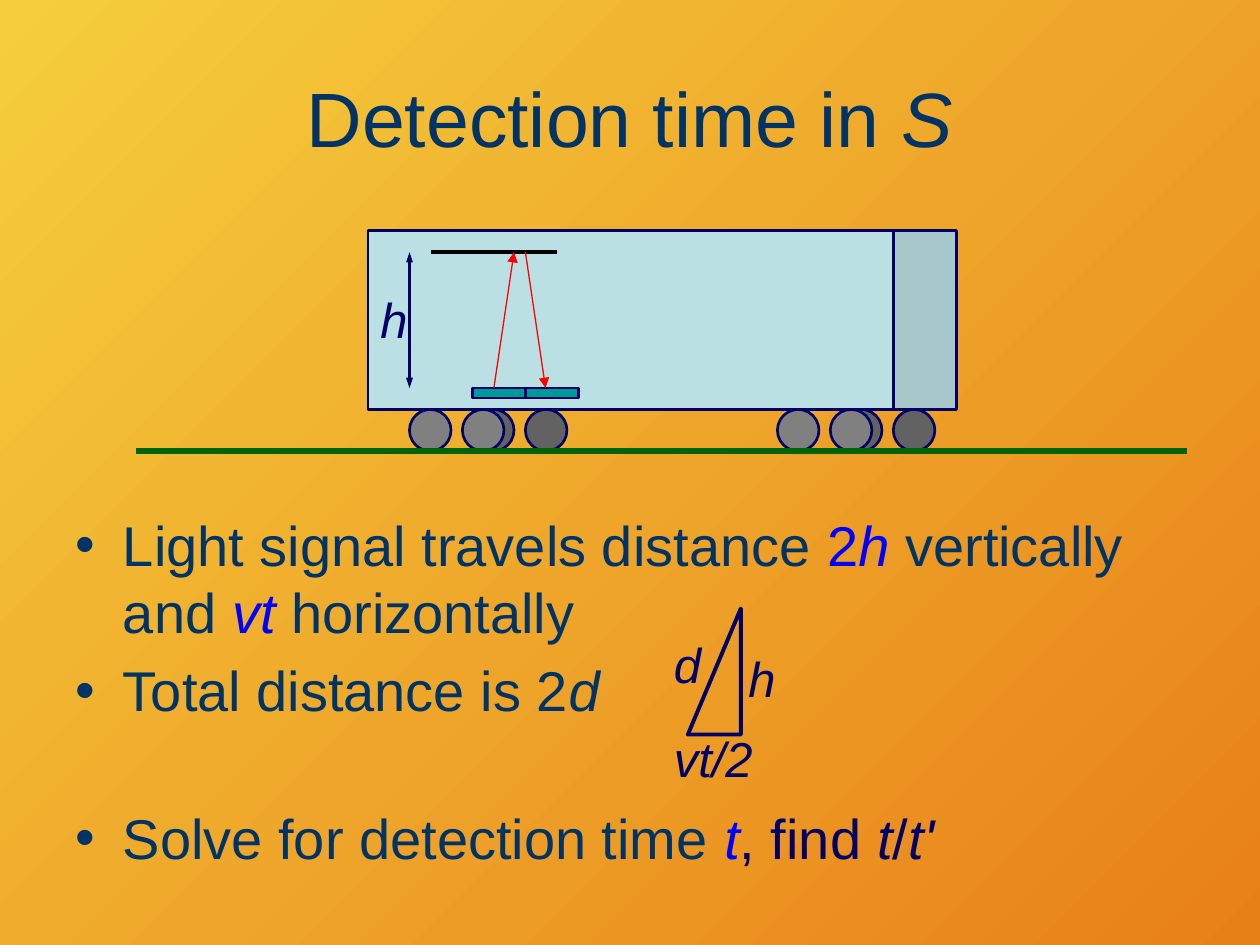
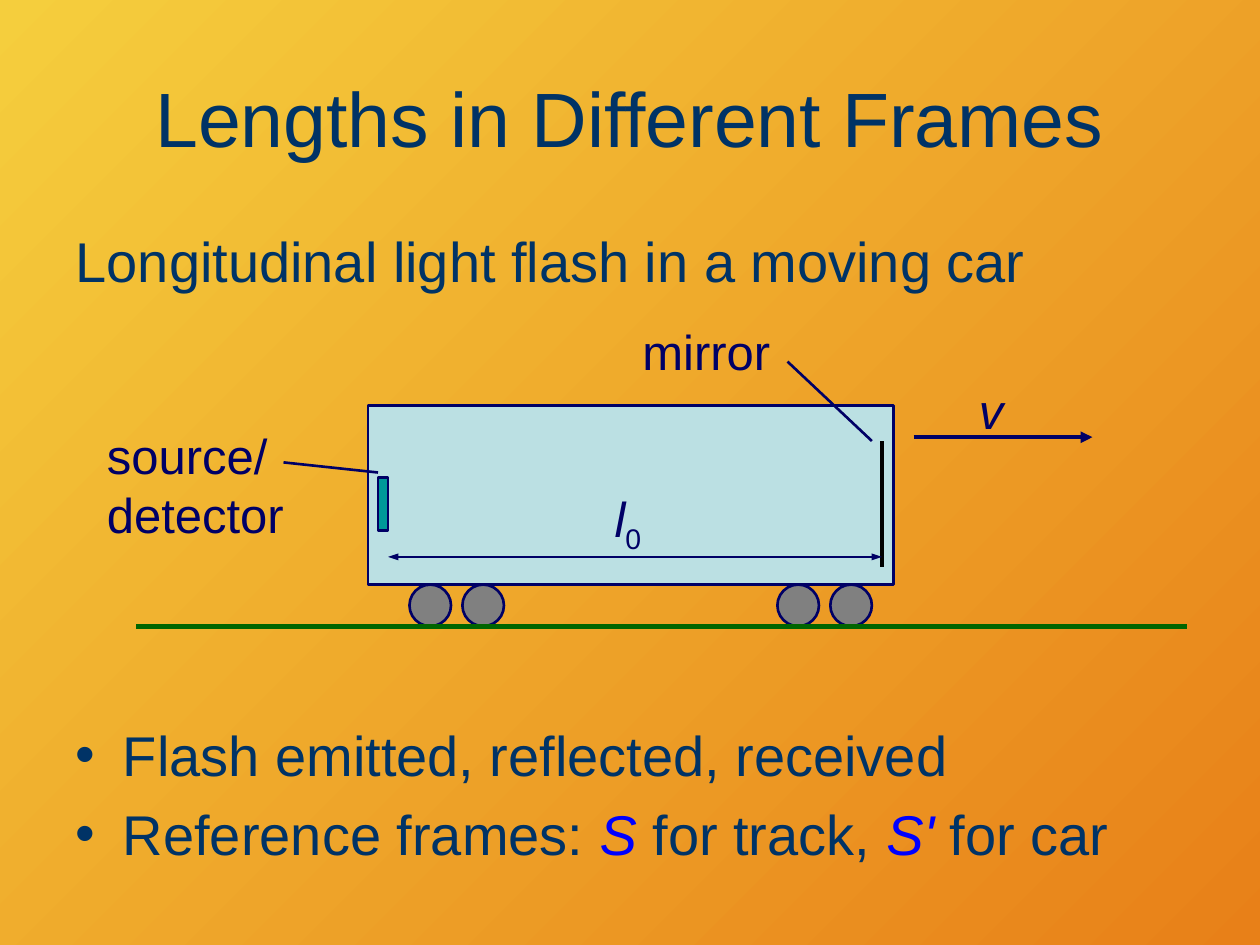
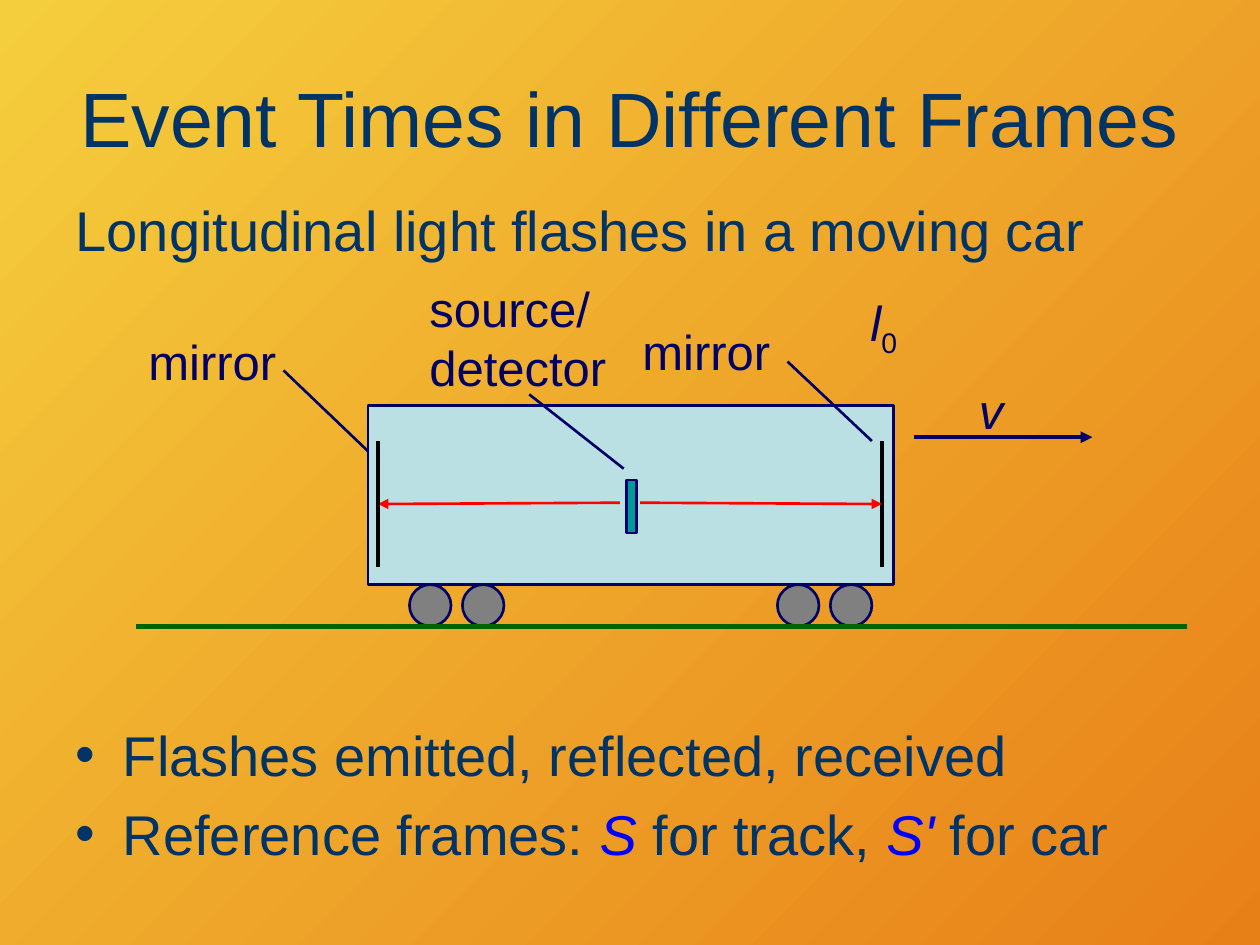
from lxml import etree
from pptx import Presentation
from pptx.dml.color import RGBColor
from pptx.enum.shapes import MSO_CONNECTOR, MSO_SHAPE as SHAPE
from pptx.enum.text import MSO_ANCHOR, MSO_AUTO_SIZE as AUTO_SIZE, PP_ALIGN
from pptx.oxml.ns import qn
from pptx.util import Inches, Pt

COLORS = {
    "yellow": "F5CE3D", "orange": "E88018", "text": "003366", "blue": "0000FF",
    "navy": "000066", "car": "BBE0E3", "rear car": "A7C8CB", "wheel": "808080",
    "rear wheel": "626262", "teal": "009999", "black": "000000",
    "track": "006500", "red": "FF0000",
}
FONT = "Arial"
CAR_LEFT, CAR_WIDTH, CAR_HEIGHT = 2.92, 4.17, 1.42
WHEEL_OFFSETS, WHEEL_SIZE = (0.33, 0.75, 3.25, 3.67), 0.33
DETECTOR_WIDTH, DETECTOR_HEIGHT = 0.42, 0.08

# Text is a list of paragraphs; a paragraph is a list of (text, style) runs
MIRROR = [("mirror", "")]
SOURCE_DETECTOR = [("source/", ""), ("\n", ""), ("detector", "")]
REST_LENGTH = [("l", "italic"), ("0", "sub")]
FRAMES = [("Reference frames: ", ""), ("S", "blue italic"), (" for track, ", ""),
          ("S'", "blue italic"), (" for car", "")]

# Lines: x1, y1, x2, y2, colour, width, arrowheads
LOW_CAR_LINES = [
    (7.25, 3.47, 8.67, 3.47, "navy", 2.25, "end"),
    (7, 3.5, 7, 4.5, "black", 2.25, ""),
    (6.25, 2.87, 6.92, 3.5, "navy", 1.5, ""),
]
# Labels: left, top, width, height, runs
LOW_CAR_LABELS = [
    (7.67, 2.97, 0.4, 0.57, [("v", "italic")]),
    (5, 2.5, 1.22, 0.57, MIRROR),
]
LIST_BOX = (0.5, 5.67, 9, 1.25)

SLIDES = [
    {
        "title": [("Detection time in ", ""), ("S", "italic")],
        "texts": [
            ((0.5, 4, 9, 1.83), True, [
                [("Light signal travels distance ", ""), ("2", "blue"),
                 ("h ", "blue italic"), ("vertically and ", ""),
                 ("vt", "blue italic"), (" horizontally", "")],
                [("Total distance is 2", ""), ("d", "italic")]]),
            ((0.5, 6.33, 8.42, 0.67), True, [
                [("Solve for detection time ", ""), ("t", "blue italic"),
                 (", find ", "navy"), ("t", "navy italic"), ("/", "navy"),
                 ("t'", "navy italic")]]),
        ],
        "car top": 1.83,
        "rear car": True,
        "detectors": [(3.75, 3.08, 0), (4.17, 3.08, 0)],
        "triangle": (5.46, 4.83, 0.42, 1),
        "lines": [
            (3.42, 2, 4.42, 2, "black", 2.25, ""),
            (3.25, 2, 3.25, 3.08, "navy", 1.5, "both"),
            (3.92, 3.08, 4.08, 2, "red", 0.75, "end"),
            (4.17, 2, 4.33, 3.08, "red", 0.75, "end"),
        ],
        "labels": [
            (2.92, 2.25, 0.42, 0.57, [("h", "italic")]),
            (5.84, 5.1, 0.42, 0.57, [("h", "italic")]),
            (5.25, 4.99, 0.42, 0.57, [("d", "italic")]),
            (5.25, 5.73, 0.84, 0.57, [("vt/2", "italic")]),
        ],
    },
    {
        "title": [("Lengths in Different Frames", "")],
        "texts": [
            ((0.5, 1.75, 9, 0.83), False,
             [[("Longitudinal light flash in a moving car", "")]]),
            (LIST_BOX, True, [[("Flash emitted, reflected, received", "")], FRAMES]),
        ],
        "car top": 3.22,
        "detectors": [(2.83, 3.96, 90)],
        "lines": LOW_CAR_LINES + [
            (2.25, 3.67, 3, 3.75, "navy", 1.5, ""),
            (3.08, 4.42, 7, 4.42, "navy", 1.5, "both"),
        ],
        "labels": LOW_CAR_LABELS + [
            (0.75, 3.33, 1.61, 1.03, SOURCE_DETECTOR),
            (4.78, 3.83, 0.44, 0.57, REST_LENGTH),
        ],
    },
    {
        "title": [("Event Times in Different Frames", "")],
        "texts": [
            ((0.5, 1.5, 9, 0.83), False,
             [[("Longitudinal light flashes in a moving car", "")]]),
            (LIST_BOX, True, [[("Flashes emitted, reflected, received", "")], FRAMES]),
        ],
        "car top": 3.22,
        "detectors": [(4.8, 3.98, 90)],
        "lines": LOW_CAR_LINES + [
            (4.2, 3.13, 4.95, 3.72, "navy", 1.5, ""),
            (3, 4, 4.92, 3.99, "red", 1.5, "start"),
            (3, 3.5, 3, 4.5, "black", 2.25, ""),
            (2.25, 2.94, 2.92, 3.58, "navy", 1.5, ""),
            (7, 4, 5.08, 3.99, "red", 1.5, "start"),
        ],
        "labels": LOW_CAR_LABELS + [
            (3.31, 2.16, 1.61, 1.03, SOURCE_DETECTOR),
            (6.81, 2.27, 0.44, 0.57, REST_LENGTH),
            (1.08, 2.58, 1.22, 0.57, MIRROR),
        ],
    },
]


def add_part(parent, kind, bounds, fill=None, width=1.5):
    part = parent.shapes.add_shape(kind, *map(Inches, bounds))
    part.shadow.inherit = False
    if fill:
        part.fill.solid()
        part.fill.fore_color.rgb = RGBColor.from_string(COLORS[fill])
    else:
        part.fill.background()
    part.line.color.rgb = RGBColor.from_string(COLORS["navy"])
    part.line.width = Pt(width)
    return part


def write(frame, paragraphs, size, color):
    for index, runs in enumerate(paragraphs):
        para = frame.add_paragraph() if index else frame.paragraphs[0]
        if index == 0:
            para.space_before = Pt(0)
        for text, style in runs:
            if text == "\n":
                para.add_line_break()
                continue
            span = para.add_run()
            span.text = text
            span.font.name = FONT
            span.font.size = Pt(size)
            span.font.italic = "italic" in style
            run_color = next((name for name in ("blue", "navy") if name in style), color)
            span.font.color.rgb = RGBColor.from_string(COLORS[run_color])
            if style == "sub":
                span.font._element.set("baseline", "-25000")


deck = Presentation()
deck.slide_width, deck.slide_height = Inches(10), Inches(7.5)

# Shared gradient background
background = deck.slide_master.background.fill
background.gradient()
background.gradient_angle = 315
for stop, name in zip(background.gradient_stops, ("yellow", "orange")):
    stop.color.rgb = RGBColor.from_string(COLORS[name])

for content in SLIDES:
    page = deck.slides.add_slide(deck.slide_layouts[3])

    # Title, lead and lists
    texts = [((0.5, 0.3, 9, 1.25), True, [content["title"]])] + content["texts"]
    for holder, (bounds, bulleted, paragraphs) in zip(page.placeholders, texts):
        holder.left, holder.top, holder.width, holder.height = map(Inches, bounds)
        frame = holder.text_frame
        frame.auto_size = AUTO_SIZE.NONE
        is_title = holder == page.shapes.title
        if is_title:
            frame.vertical_anchor = MSO_ANCHOR.MIDDLE
            frame.paragraphs[0].alignment = PP_ALIGN.CENTER
        write(frame, paragraphs, 44 if is_title else 32, "text")
        if not bulleted:
            etree.SubElement(frame.paragraphs[0]._p.get_or_add_pPr(), qn("a:buNone"))

    # Railway cars, the rear one first
    car_top = content["car top"]
    cars = [(CAR_LEFT, "car", "wheel")]
    if content.get("rear car"):
        cars.insert(0, (CAR_LEFT + 0.5, "rear car", "rear wheel"))
    for left, body_color, wheel_color in cars:
        car = page.shapes.add_group_shape()
        add_part(car, SHAPE.RECTANGLE, (left, car_top, CAR_WIDTH, CAR_HEIGHT), body_color)
        for offset in WHEEL_OFFSETS:
            add_part(car, SHAPE.OVAL, (left + offset, car_top + CAR_HEIGHT,
                                       WHEEL_SIZE, WHEEL_SIZE), wheel_color)

    # Source and detector
    for left, top, rotation in content["detectors"]:
        detector = add_part(page, SHAPE.RECTANGLE,
                            (left, top, DETECTOR_WIDTH, DETECTOR_HEIGHT), "teal")
        detector.rotation = rotation

    # Distance triangle
    if "triangle" in content:
        triangle = add_part(page, SHAPE.RIGHT_TRIANGLE, content["triangle"], width=2.25)
        triangle._element.spPr.find(qn("a:xfrm")).set("flipH", "1")

    # Track, mirrors, light rays, leaders and dimensions
    track_y = car_top + CAR_HEIGHT + WHEEL_SIZE
    track = (1.08, track_y, 9.42, track_y, "track", 3, "")
    for x1, y1, x2, y2, color, width, arrows in [track] + content["lines"]:
        line = page.shapes.add_connector(MSO_CONNECTOR.STRAIGHT,
                                         *map(Inches, (x1, y1, x2, y2)))
        line.line.color.rgb = RGBColor.from_string(COLORS[color])
        line.line.width = Pt(width)
        for tag, sides in (("a:headEnd", ("start", "both")), ("a:tailEnd", ("end", "both"))):
            if arrows in sides:
                etree.SubElement(line.line._get_or_add_ln(), qn(tag), type="triangle",
                                 w="sm" if arrows == "both" else "med", len="med")
        etree.SubElement(line._element.spPr, qn("a:effectLst"))

    # Labels
    for *bounds, runs in content["labels"]:
        box = page.shapes.add_textbox(*map(Inches, bounds))
        box.text_frame.word_wrap = False
        box.text_frame.auto_size = AUTO_SIZE.SHAPE_TO_FIT_TEXT
        write(box.text_frame, [runs], 28, "navy")

deck.save("out.pptx")
